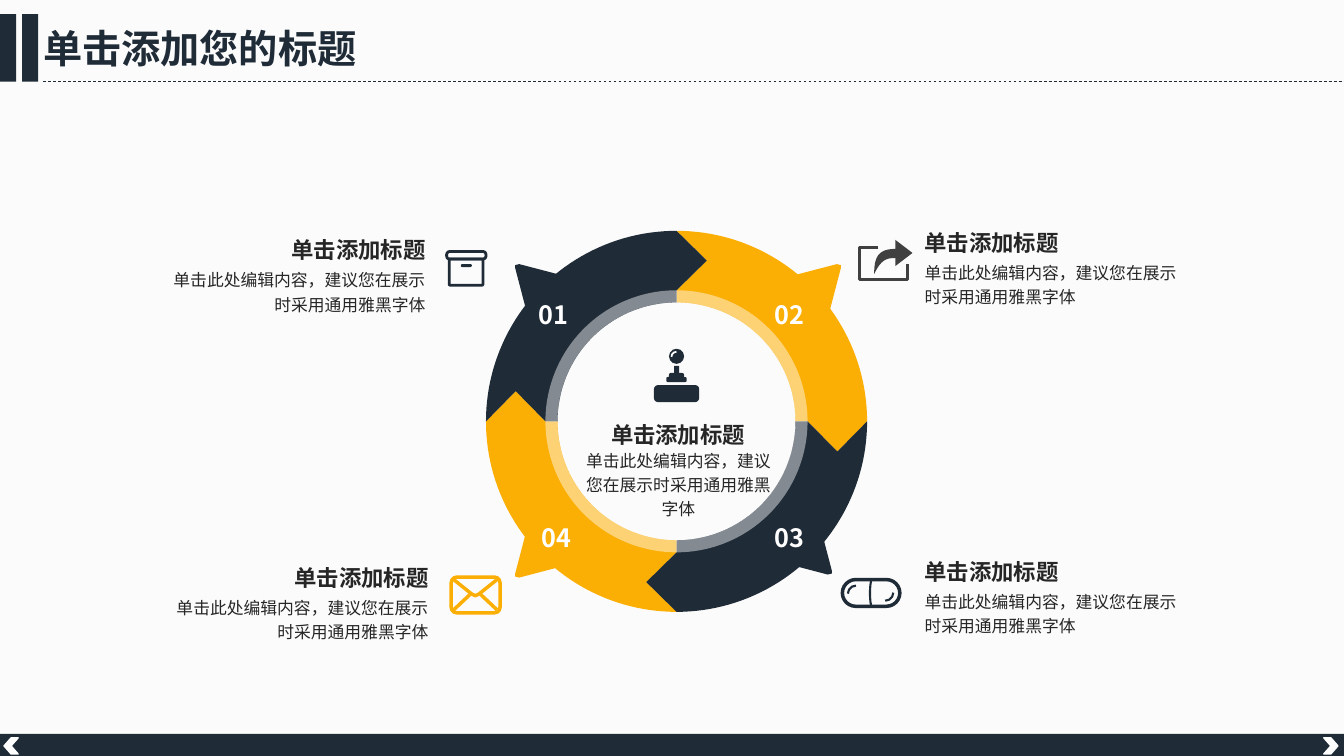
from math import cos, sin, radians
from lxml.etree import SubElement
from pptx import Presentation
from pptx.dml.color import RGBColor
from pptx.enum.dml import MSO_LINE
from pptx.enum.shapes import MSO_CONNECTOR, MSO_SHAPE as SHAPE
from pptx.enum.text import PP_ALIGN as ALIGN
from pptx.oxml.ns import qn
from pptx.util import Inches, Pt

NAVY = RGBColor(0x1F, 0x2B, 0x37)
AMBER = RGBColor(0xFB, 0xAE, 0x03)
WHITE = RGBColor(0xFF, 0xFF, 0xFF)
PAPER = RGBColor(0xFB, 0xFB, 0xFB)
INK = RGBColor(0x26, 0x26, 0x26)
GREY = RGBColor(0x40, 0x40, 0x40)
CJK = "Noto Sans CJK SC"

WIDTH, HEIGHT = Inches(13.33), Inches(7.5)
CELL = HEIGHT // 75  # square grid, 75 rows high
COLS, ROWS = WIDTH / CELL, 75
HUB_X, HUB_Y = 67.1, 41.8
OUTER, MIDDLE, INNER = 18.9, 13, 11.8

HEADING = "单击添加标题"
BODY = "单击此处编辑内容，建议您在展示时采用通用雅黑字体"


def cells(*values):
    return [round(v * CELL) for v in values]


def paint(sp, fill=None, line=None, width=1, opacity=None):
    sp.shadow.inherit = False
    if fill is None:
        sp.fill.background()
    else:
        sp.fill.solid()
        sp.fill.fore_color.rgb = fill
    if line is None:
        sp.line.fill.background()
    else:
        sp.line.color.rgb = line
        sp.line.width = Pt(width)
    if opacity:
        color = sp.fill._xPr.find(".//" + qn("a:srgbClr"))
        SubElement(color, qn("a:alpha"), val=str(opacity * 1000))
    return sp


def preset(s, kind, box, adjust=(), **style):
    sp = s.shapes.add_shape(kind, *cells(*box))
    for i, value in enumerate(adjust):
        sp.adjustments[i] = value
    return paint(sp, **style)


def outline(s, points, close=True, **style):
    start, *rest = [cells(*point) for point in points]
    builder = s.shapes.build_freeform(*start, scale=1.0)
    builder.add_line_segments(rest, close=close)
    return paint(builder.convert_to_shape(), **style)


def text(s, words, box, align=ALIGN.LEFT, font="Arial", color=INK, spacing=None, inset=True, **formats):
    sp = s.shapes.add_textbox(*cells(*box))
    tf = sp.text_frame
    tf.word_wrap = True
    if not inset:
        for side in ("left", "top", "right", "bottom"):
            setattr(tf, f"margin_{side}", 0)
    p = tf.paragraphs[0]
    p.alignment, p.line_spacing = align, spacing
    r = p.add_run()
    r.text = words
    for name, value in {"name": font, **formats}.items():
        setattr(r.font, name, value)
    r.font.color.rgb = color
    SubElement(r._r.get_or_add_rPr(), qn("a:ea"), typeface=CJK)


def caption(s, heading_box, body_box, align):
    style = dict(align=align, spacing=1.2, inset=False)
    text(s, HEADING, heading_box, size=Pt(16), bold=True, **style)
    text(s, BODY, body_box, size=Pt(12), **style)


def around(angle, radius, ahead=0):
    """Point at a clockwise angle from twelve o'clock, moved ahead along the tangent."""
    a = radians(angle)
    return (HUB_X + radius * sin(a) + ahead * cos(a),
            HUB_Y - radius * cos(a) + ahead * sin(a))


def ring_segment(s, start, color):
    end, tip = start + 90, (OUTER + MIDDLE) / 2
    points = [around(a, INNER) for a in range(start, end + 1, 2)]
    points += [around(end, MIDDLE), around(end, tip, 3)]
    points += [around(a, OUTER) for a in range(end, start - 1, -2)]
    points += [around(start, tip, 3), around(start, MIDDLE)]
    outline(s, points, fill=color)


def spike(s, x, y, right, down, color):
    corner = [(0.4, 0), (0, 0.1), (0, 0.4), (1.1, 4.6), (1.5, 4.8),
              (4.8, 1.5), (4.6, 1.1)]
    outline(s, [(x - right * dx, y - down * dy) for dx, dy in corner], fill=color)


def bezier(a, b, c, d, steps=12):
    for i in range(steps + 1):
        t = i / steps
        weights = ((1 - t) ** 3, 3 * t * (1 - t) ** 2, 3 * t * t * (1 - t), t ** 3)
        yield tuple(sum(w * v for w, v in zip(weights, axis)) for axis in zip(a, b, c, d))


def frame(s):
    preset(s, SHAPE.RECTANGLE, (0, 0, COLS, ROWS), fill=PAPER, opacity=95)
    rule = s.shapes.add_connector(MSO_CONNECTOR.STRAIGHT, *cells(4.3, 8.1, COLS, 8.1))
    rule.line.color.rgb, rule.line.width = NAVY, Pt(0.5)
    rule.line.dash_style = MSO_LINE.DASH
    SubElement(rule._element.spPr, qn("a:effectLst"))
    for x in (0, 2.2):
        preset(s, SHAPE.RECTANGLE, (x, 1.4, 1.6, 6.7), fill=NAVY)
    text(s, "单击添加您的标题", (3.3, 1.9, 40.8, 5.7), font=CJK, color=NAVY,
         size=Pt(28), bold=True)
    preset(s, SHAPE.RECTANGLE, (0, 72.8, COLS, 2.2), fill=NAVY)
    for x, turn in ((131.3, 0), (0.4, 180)):
        arrow = preset(s, SHAPE.CHEVRON, (x, 73.2, 1.4, 1.6), fill=WHITE, line=WHITE)
        arrow.rotation = turn


def cycle(s):
    for start, color in ((0, AMBER), (180, AMBER), (270, NAVY), (90, NAVY)):
        ring_segment(s, start, color)
    preset(s, SHAPE.DONUT, (HUB_X - MIDDLE, HUB_Y - MIDDLE, 2 * MIDDLE, 2 * MIDDLE),
           [(MIDDLE - INNER) / (2 * MIDDLE)], fill=WHITE, opacity=45)
    for x, y, right, down, color in ((51.1, 26.2, -1, -1, NAVY), (83.4, 26.2, 1, -1, AMBER),
                                     (82.5, 57, 1, 1, NAVY), (51.1, 57.3, -1, 1, AMBER)):
        spike(s, x, y, right, down, color)
    for number, x, y in (("01", 54.9, 29.2), ("02", 78.3, 29.2),
                         ("03", 78.3, 51.3), ("04", 55.2, 51.3)):
        text(s, number, (x - 3.5, y, 7, 4), ALIGN.CENTER, CJK, WHITE, size=Pt(18), bold=True)


def archive_icon(s):
    pen = dict(line=NAVY, width=2)
    preset(s, SHAPE.ROUNDED_RECTANGLE, (44.3, 24.95, 3.9, 0.75), [0.4], **pen)
    preset(s, SHAPE.ROUNDED_RECTANGLE, (44.55, 25.7, 3.35, 2.6), [0.04], **pen)
    preset(s, SHAPE.ROUNDED_RECTANGLE, (45.7, 26.2, 1.1, 0.3), [0.5], fill=NAVY)


def share_icon(s):
    outline(s, [(87.1, 24.55), (85.25, 24.55), (85.25, 27.75), (90, 27.75), (90, 26.2)],
            close=False, line=GREY, width=2.5)
    curve = [*bezier((88.8, 24.7), (87.1, 24.7), (86.7, 25.5), (86.7, 27.2)),
             *bezier((86.7, 27.2), (87.4, 25.7), (88, 25.6), (88.8, 25.6))]
    outline(s, [*curve, (88.8, 26.4), (90.5, 25.1), (88.8, 23.8)], fill=GREY)


def pill_icon(s):
    preset(s, SHAPE.ROUNDED_RECTANGLE, (83.55, 57.5, 5.7, 2.65), [0.5], line=NAVY, width=2.5)
    outline(s, bezier((86.4, 57.6), (86.25, 58.3), (86.25, 59.4), (86.4, 60.1)),
            close=False, line=NAVY, width=1.5)
    for x, y, start in ((84.1, 58.1, 108), (87, 58, 0)):
        preset(s, SHAPE.ARC, (x, y, 1.6, 1.6), [start, start + 54], line=NAVY, width=1.5)


def mail_icon(s):
    pen = dict(line=AMBER, width=2.5)
    preset(s, SHAPE.ROUNDED_RECTANGLE, (44.75, 57.25, 4.85, 3.55), [0.16], **pen)
    for strokes in ([(45, 57.5), (46.8, 58.95), (47.15, 59.1), (47.5, 58.95), (49.3, 57.5)],
                    [(45, 60.5), (46.6, 59)], [(49.3, 60.5), (47.7, 59)]):
        outline(s, strokes, close=False, **pen)


def joystick_icon(s):
    for w, y, h, kind in ((4.5, 38.2, 1.7, SHAPE.ROUNDED_RECTANGLE), (1.5, 34.6, 1.5, SHAPE.OVAL),
                          (0.5, 36.3, 0.9, SHAPE.RECTANGLE), (1.5, 37, 0.8, SHAPE.ROUNDED_RECTANGLE),
                          (2, 37.4, 0.5, SHAPE.ROUNDED_RECTANGLE)):
        preset(s, kind, (HUB_X - w / 2, y, w, h), [0.25] if kind == SHAPE.ROUNDED_RECTANGLE else (),
               fill=NAVY)
    preset(s, SHAPE.ARC, (66.6, 34.9, 1, 1), [108, 162], line=WHITE, width=1.25)


def main():
    prs = Presentation()
    prs.slide_width, prs.slide_height = WIDTH, HEIGHT
    s = prs.slides.add_slide(prs.slide_layouts[6])
    frame(s)
    cycle(s)
    for icon in (share_icon, mail_icon, pill_icon, archive_icon, joystick_icon):
        icon(s)
    for x, y in ((91.7, 22.2), (91.7, 54.8)):
        caption(s, (x, y, 14.2, 3), (x, y + 3.5, 25.5, 4.6), ALIGN.LEFT)
    for right, y in ((42.2, 22.9), (42.5, 55.4)):
        caption(s, (right - 14.2, y, 14.2, 3), (right - 25.5, y + 3.5, 25.5, 4.6), ALIGN.RIGHT)
    caption(s, (59, 41.2, 16.5, 3), (58, 44.3, 18.6, 7.3), ALIGN.CENTER)
    prs.save("out.pptx")


if __name__ == "__main__":
    main()
